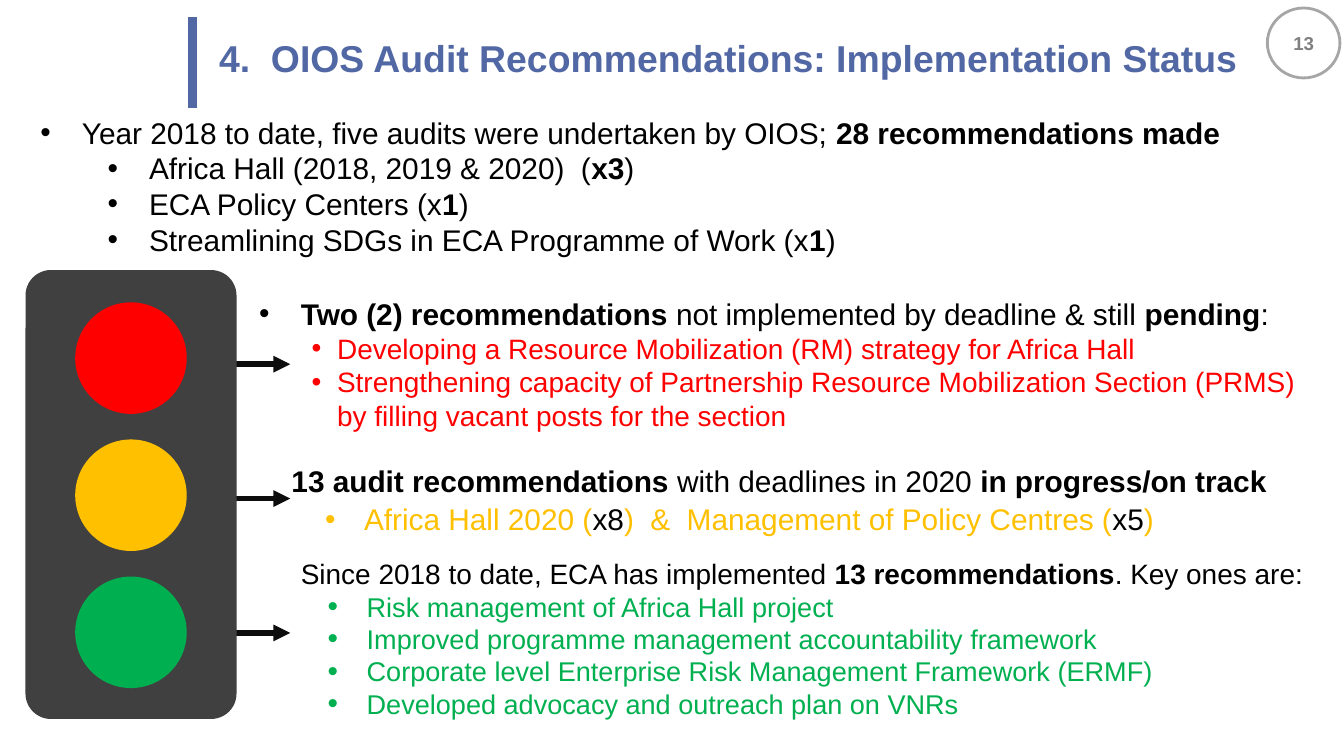
from lxml.etree import SubElement
from pptx import Presentation
from pptx.dml.color import RGBColor
from pptx.enum.shapes import MSO_CONNECTOR, MSO_SHAPE
from pptx.enum.text import MSO_ANCHOR, MSO_AUTO_SIZE, PP_ALIGN
from pptx.oxml.ns import qn
from pptx.util import Inches, Pt

BLACK, RED, AMBER, GREEN = "000000", "FF0000", "FFC000", "00B050"
BLUE, DARK, INK = "5268A4", "404040", "0D0D0D"
BOLD = {"bold": True}


def color(hexa):
    return RGBColor.from_string(hexa)


def box(left, top, width, height):
    return [Inches(v) for v in (left, top, width, height)]


def place(shape, spot):
    for name, value in zip(("left", "top", "width", "height"), spot):
        setattr(shape, name, value)


def style(font, look):
    """Apply font values; "color" takes a hex string and "size" points."""
    for name, value in look.items():
        if name == "color":
            font.color.rgb = color(value)
        else:
            setattr(font, name, Pt(value) if name == "size" else value)


def bullet(para, left, hang, scale=100):
    props = para._p.get_or_add_pPr()
    props.set("marL", str(Inches(left)))
    props.set("indent", str(-Inches(hang)))
    SubElement(props, qn("a:buSzPct"), val=str(scale * 1000))
    SubElement(props, qn("a:buFont"), typeface="Arial")
    SubElement(props, qn("a:buChar"), char="•")


def write(frame, lines):
    """Write (text, look, bullet, level) lines; parts between ** get the look's accent."""
    frame.word_wrap = True
    frame.auto_size = MSO_AUTO_SIZE.NONE
    for i, (text, look, mark, level) in enumerate(lines):
        para = frame.paragraphs[0] if i == 0 else frame.add_paragraph()
        para.level = level
        if mark:
            bullet(para, *mark)
        para.space_before = Pt(0)
        base = {"name": "Arial", "bold": False, **look}
        accent = base.pop("accent", BOLD)
        for j, part in enumerate(text.split("**")):
            if part:
                run = para.add_run()
                run.text = part
                style(run.font, {**base, **accent} if j % 2 else base)


def add_text(slide, spot, lines):
    write(slide.shapes.add_textbox(*spot).text_frame, lines)


def add_shape(slide, kind, spot, fill, edge=None):
    shape = slide.shapes.add_shape(kind, *spot)
    shape.shadow.inherit = False
    shape.fill.solid()
    shape.fill.fore_color.rgb = color(fill)
    if edge:
        shape.line.color.rgb = color(edge)
        shape.line.width = Pt(1.5)
    else:
        shape.line.fill.background()
    return shape


def add_line(slide, start, end, hexa, width, arrow=False):
    points = [Inches(v) for v in (*start, *end)]
    line = slide.shapes.add_connector(MSO_CONNECTOR.STRAIGHT, *points)
    line.line.color.rgb = color(hexa)
    line.line.width = Pt(width)
    if arrow:
        SubElement(line.line._get_or_add_ln(), qn("a:tailEnd"), type="triangle")
    SubElement(line._element.spPr, qn("a:effectLst"))


def add_title(slide, text):
    title = slide.shapes.title
    place(title, box(1.61, 0.19, 7.71, 0.54))
    frame = title.text_frame
    for side in ("left", "top", "right", "bottom"):
        setattr(frame, f"margin_{side}", Inches(0.02))
    frame.vertical_anchor = MSO_ANCHOR.MIDDLE
    write(frame, [(text, {"size": 20, "color": BLUE, "bold": True}, None, 0)])
    para = frame.paragraphs[0]
    para.alignment = PP_ALIGN.LEFT
    para.line_spacing = 0.8
    add_line(slide, (1.43, 0.8), (1.43, 0.13), BLUE, 5)


def add_badge(slide, number):
    badge = add_shape(slide, MSO_SHAPE.OVAL, box(9.43, 0.06, 0.54, 0.52), "FFFFFF", "A6A6A6")
    frame = badge.text_frame
    frame.vertical_anchor = MSO_ANCHOR.MIDDLE
    write(frame, [(number, {"size": 10, "color": "7F7F7F", "bold": True}, None, 0)])
    frame.paragraphs[0].alignment = PP_ALIGN.CENTER


def add_light(slide):
    """Draw the traffic light, with an arrow leaving each lamp."""
    lamps = (RED, AMBER, GREEN)
    for i in range(len(lamps)):
        add_line(slide, (1.3, 2.71 + i), (2.16, 2.71 + i), INK, 3, arrow=True)
    case = add_shape(slide, MSO_SHAPE.ROUNDED_RECTANGLE, box(0.19, 2.01, 1.57, 3.34), DARK)
    case.adjustments[0] = 0.12
    for i, lamp in enumerate(lamps):
        add_shape(slide, MSO_SHAPE.OVAL, box(0.56, 2.25 + 1.02 * i, 0.83, 0.83), lamp)


def main():
    deck = Presentation()
    deck.slide_width = Inches(10)
    deck.slide_height = deck.slide_width * 9 // 16
    slide = deck.slides.add_slide(deck.slide_layouts[1])
    plain = {"size": 16, "color": BLACK}
    top, sub = (0.31, 0.31), (0.81, 0.31)

    add_title(slide, "4.  OIOS Audit Recommendations: Implementation Status")
    add_badge(slide, "13")

    body = slide.placeholders[1]
    place(body, box(0.2, 0.8, 9.8, 1.18))
    audits = ("Africa Hall (2018, 2019 & 2020)  (**x3**)",
              "ECA Policy Centers (x**1**)",
              "Streamlining SDGs in ECA Programme of Work (x**1**)")
    intro = "Year 2018 to date, five audits were undertaken by OIOS; **28 recommendations made**"
    write(body.text_frame, [(intro, plain, top, 0)] + [(t, plain, sub, 1) for t in audits])

    add_light(slide)

    late = ("Developing a Resource Mobilization (RM) strategy for Africa Hall",
            "Strengthening capacity of Partnership Resource Mobilization Section (PRMS) "
            "by filling vacant posts for the section")
    head = "**Two (2) recommendations **not implemented by deadline & still **pending**:"
    red = {"size": 15, "color": RED}
    add_text(slide, box(1.83, 2.15, 8.09, 1.13),
             [(head, plain, top, 0)] + [(t, red, (0.58, 0.19), 1) for t in late])

    head = "**13 audit recommendations **with deadlines in 2020 **in progress/on track**"
    add_text(slide, box(2.07, 3.39, 8.09, 0.37), [(head, plain, None, 0)])
    amber = {"size": 16, "color": AMBER, "accent": {"color": BLACK}}
    text = "Africa Hall 2020 (**x8**)  &  Management of Policy Centres (**x5**)"
    add_text(slide, box(2.32, 3.68, 7.68, 0.37), [(text, amber, (0.29, 0.29), 0)])

    done = ("Risk management of Africa Hall project",
            "Improved programme management accountability framework",
            "Corporate level Enterprise Risk Management Framework (ERMF)",
            "Developed advocacy and outreach plan on VNRs")
    head = "Since 2018 to date, ECA has implemented **13 recommendations**. Key ones are:"
    green = {"size": 14.5, "color": GREEN}
    add_text(slide, box(2.14, 4.09, 7.93, 1.35),
             [(head, {"size": 15, "color": BLACK}, None, 0)]
             + [(t, green, (0.49, 0.29, 110), 1) for t in done])

    deck.save("out.pptx")


if __name__ == "__main__":
    main()
